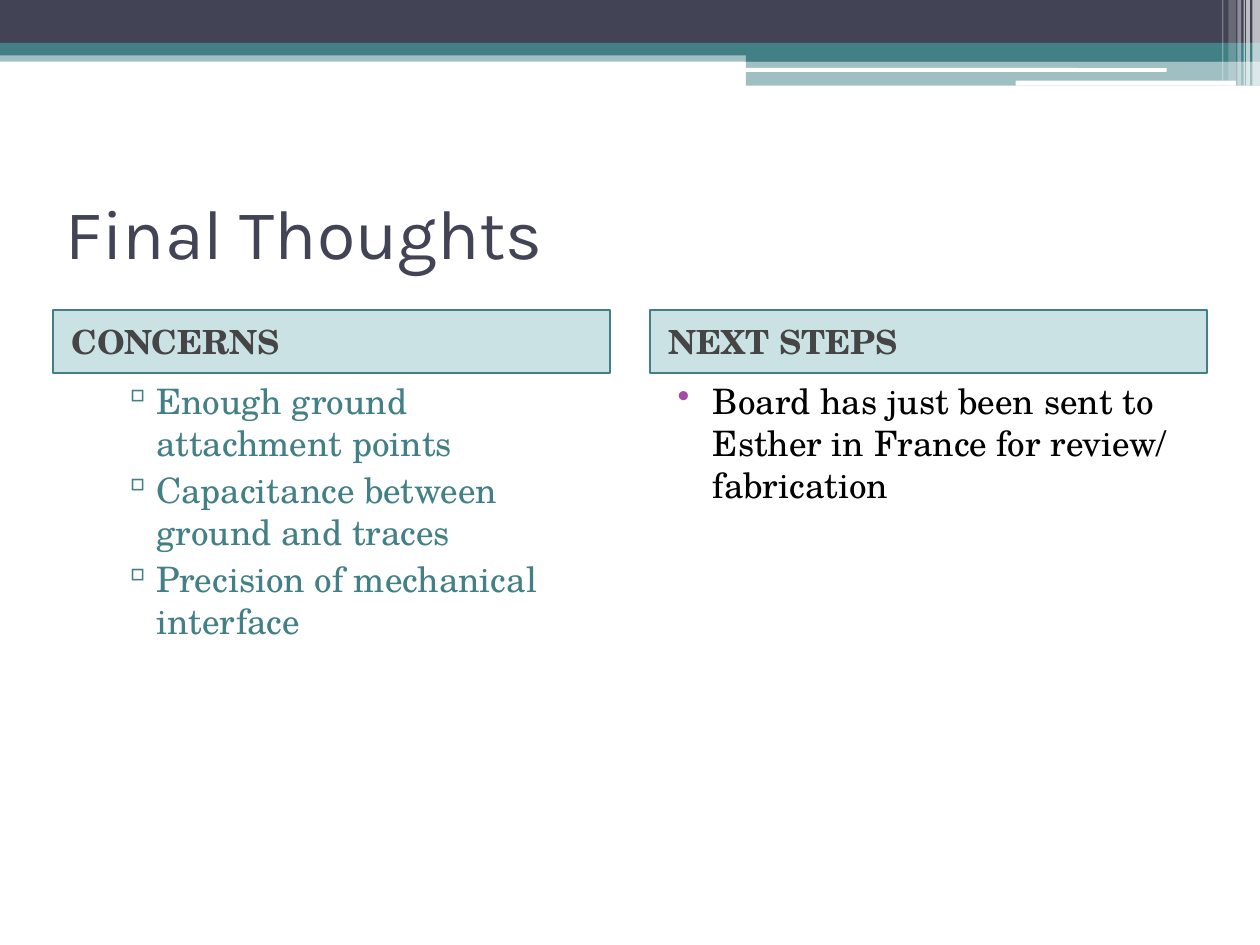
import pptx
import pptx.util
import pptx.dml.color
import pptx.enum.shapes
import pptx.enum.text
import pptx.oxml.ns
import lxml.etree

Inches = pptx.util.Inches
Pt = pptx.util.Pt
SHAPE = pptx.enum.shapes.MSO_SHAPE
ANCHOR = pptx.enum.text.MSO_ANCHOR
qn = pptx.oxml.ns.qn

NAVY, TEAL, WHITE = "424456", "438086", "FFFFFF"


def paint(color, code):
    color.rgb = pptx.dml.color.RGBColor.from_string(code)


def bullet(para, mark, color):
    props = para._p.get_or_add_pPr()
    tint = lxml.etree.SubElement(props, qn("a:buClr"))
    lxml.etree.SubElement(tint, qn("a:srgbClr"), val=color)
    lxml.etree.SubElement(props, qn("a:buChar"), char=mark)


def write(frame, lines, size=20, font="TeX Gyre Schola", color="000000",
          bold=False, anchor=ANCHOR.TOP, left=0, hang=0, mark=None, tint=None):
    frame.word_wrap = True
    frame.auto_size = pptx.enum.text.MSO_AUTO_SIZE.NONE
    frame.vertical_anchor = anchor
    for i, line in enumerate(lines):
        para = frame.add_paragraph() if i else frame.paragraphs[0]
        if mark:
            bullet(para, mark, tint)
        para.alignment = pptx.enum.text.PP_ALIGN.LEFT
        para.space_before = Pt(3 if i else 0)
        props = para._p.get_or_add_pPr()
        props.set("marL", str(Inches(left)))
        props.set("indent", str(Inches(-hang)))
        run = para.add_run()
        run.text = line
        run.font.size = Pt(size)
        run.font.name = font
        run.font.bold = bold
        paint(run.font.color, color)


class Deck:
    def __init__(self):
        self.file = pptx.Presentation()
        self.file.slide_width = Inches(10)
        self.file.slide_height = Inches(7.5)
        self.slide = self.file.slides.add_slide(self.file.slide_layouts[5])
        fill = self.slide.background.fill
        fill.solid()
        paint(fill.fore_color, WHITE)

    def bar(self, box, color, alpha=100, line=None, kind=SHAPE.RECTANGLE):
        shape = self.slide.shapes.add_shape(kind, *map(Inches, box))
        shape.shadow.inherit = False
        shape.fill.solid()
        paint(shape.fill.fore_color, color)
        if alpha < 100:
            tone = shape.fill._xPr.find(".//" + qn("a:srgbClr"))
            lxml.etree.SubElement(tone, qn("a:alpha"), val=str(alpha * 1000))
        if line:
            paint(shape.line.color, line)
            shape.line.width = Pt(1)
        else:
            shape.line.fill.background()
        return shape

    def title(self, box, text):
        shape = self.slide.shapes.title
        shape.left, shape.top, shape.width, shape.height = map(Inches, box)
        write(shape.text_frame, [text], size=40, font="Karla", color=NAVY,
              anchor=ANCHOR.MIDDLE)

    def head(self, box, text):
        shape = self.bar(box, "328E97", 25, line=TEAL)
        write(shape.text_frame, [text], size=19, color="454545", bold=True,
              anchor=ANCHOR.MIDDLE, left=0.05)

    def body(self, box, lines, **style):
        shape = self.slide.shapes.add_textbox(*map(Inches, box))
        write(shape.text_frame, lines, **style)


def main():
    deck = Deck()
    for box, color, alpha in (
        ((0, 0.4, 10, 0.09), TEAL, 50),
        ((0, 0, 10, 0.34), NAVY, 100),
        ((0, 0.34, 10, 0.1), TEAL, 100),
        ((5.92, 0.39, 4.08, 0.1), TEAL, 100),
        ((5.92, 0.48, 4.08, 0.2), TEAL, 50),
    ):
        deck.bar(box, color, alpha)
    for box in ((5.91, 0.54, 3.35, 0.03), (8.06, 0.64, 1.75, 0.04)):
        deck.bar(box, WHITE, kind=SHAPE.ROUNDED_RECTANGLE)
    for left, width, high, alpha in (
        (9.94, 0.06, 0.68, 65), (9.89, 0.03, 0.68, 65),
        (9.87, 0.01, 0.68, 60), (9.82, 0.03, 0.68, 40),
        (9.75, 0.06, 0.64, 20), (9.7, 0.01, 0.64, 30),
    ):
        deck.bar((left, 0, width, high), WHITE, alpha)

    deck.title((0.42, 1.25, 9.17, 1.17), "Final Thoughts")
    columns = (
        ("CONCERNS",
         ["Enough ground attachment points",
          "Capacitance between ground and traces",
          "Precision of mechanical interface"],
         dict(color=TEAL, left=0.72, hang=0.27, mark="▫", tint=TEAL)),
        ("NEXT STEPS",
         ["Board has just been sent to Esther in France for review/ fabrication"],
         dict(left=0.4, hang=0.28, mark="•", tint="A04DA3")),
    )
    for i, (name, lines, style) in enumerate(columns):
        left = 0.42 + i * 4.74
        deck.head((left, 2.46, 4.42, 0.5), name)
        deck.body((left, 2.96, 4.42, 4.25), lines, **style)
    deck.file.save("out.pptx")


if __name__ == "__main__":
    main()
